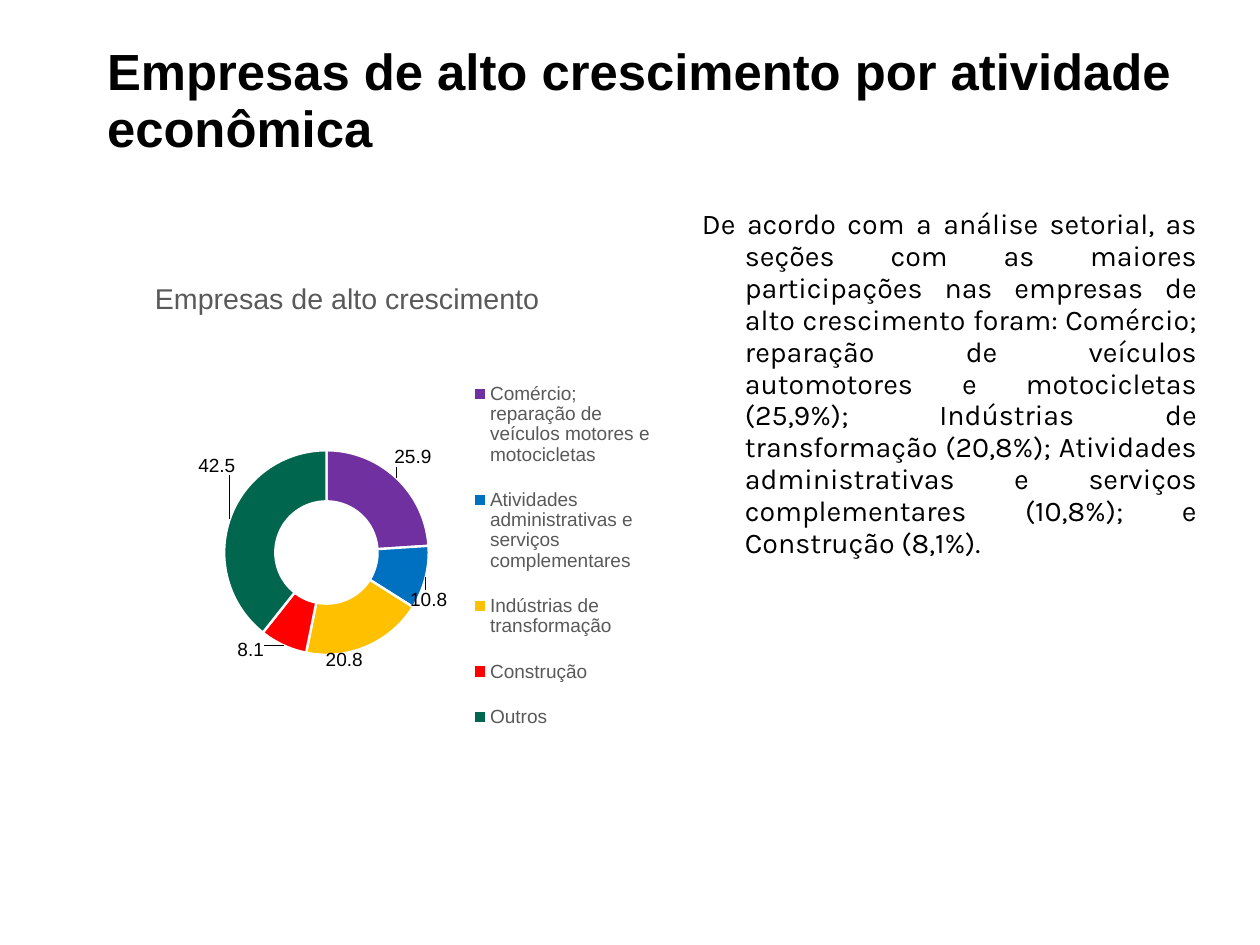
from pptx import Presentation
from pptx import util as u
from pptx.chart import data
from pptx.dml import color
from pptx.enum import chart as ch, text
from pptx.oxml import parse_xml
from pptx.oxml.ns import nsdecls

EMU_PER_PX = 8000
TITLE = "Empresas de alto crescimento por atividade econômica"
BODY = (
    "De acordo com a análise setorial, as seções com as maiores participações "
    "nas empresas de alto crescimento foram: Comércio; reparação de veículos "
    "automotores e motocicletas (25,9%); Indústrias de transformação (20,8%); "
    "Atividades administrativas e serviços complementares (10,8%); "
    "e Construção (8,1%)."
)
# Category, value, colour, label shift as a fraction of the chart
SECTORS = [
    ("Comércio; reparação de veículos motores e motocicletas",
     25.9, "7030A0", (0.055, -0.07)),
    ("Atividades administrativas e serviços complementares",
     10.8, "0070C0", (0.045, 0.05)),
    ("Indústrias de transformação", 20.8, "FFC000", (-0.02, 0.065)),
    ("Construção", 8.1, "FF0000", (-0.07, 0.05)),
    ("Outros", 42.5, "00664D", (-0.06, -0.11)),
]


def px(n):
    return u.Emu(n * EMU_PER_PX)


def rgb(value):
    return color.RGBColor.from_string(value)


def set_attrs(obj, **values):
    for name, value in values.items():
        setattr(obj, name, value)


def set_font(font, size, name="Arial", hex_color="000000", bold=False):
    set_attrs(font, size=u.Pt(size), name=name, bold=bold)
    font.color.rgb = rgb(hex_color)


def box(left, top, width, height):
    return dict(left=px(left), top=px(top), width=px(width), height=px(height))


def fill_text(sp, content, size, font, bold=False, align=text.PP_ALIGN.LEFT):
    tf = sp.text_frame
    set_attrs(tf, text=content, word_wrap=True,
              auto_size=text.MSO_AUTO_SIZE.NONE,
              vertical_anchor=text.MSO_ANCHOR.TOP,
              margin_left=0, margin_right=0, margin_top=0, margin_bottom=0)
    p = tf.paragraphs[0]
    set_attrs(p, alignment=align, line_spacing=0.93)
    set_font(p.runs[0].font, size, font, bold=bold)
    return p


def add_body(slide):
    sp = slide.shapes.add_textbox(**box(702, 207, 495, 562))
    p = fill_text(sp, BODY, 18, "Karla", align=text.PP_ALIGN.JUSTIFY)
    sp.text_frame.margin_top = px(2)
    pPr = p._p.get_or_add_pPr()
    pPr.set("marL", str(px(43)))
    pPr.set("indent", str(px(-43)))


def set_layout(parent, index, inner=False, edge=True, **fractions):
    """Give a chart part a manual layout, as its child number index."""
    for old in parent.xpath("c:layout"):
        parent.remove(old)
    parts = ['<c:layoutTarget val="inner"/>'] if inner else []
    if edge:
        parts += ['<c:xMode val="edge"/>', '<c:yMode val="edge"/>']
    parts += [f'<c:{k} val="{v}"/>' for k, v in fractions.items()]
    parent.insert(index, parse_xml(
        f'<c:layout {nsdecls("c")}><c:manualLayout>{"".join(parts)}'
        '</c:manualLayout></c:layout>'))


def add_doughnut(slide):
    cd = data.CategoryChartData(number_format="0.0")
    cd.categories = [s[0] for s in SECTORS]
    cd.add_series("Series 1", [s[1] for s in SECTORS])
    frame = slide.shapes.add_chart(
        ch.XL_CHART_TYPE.DOUGHNUT, *box(63, 207, 620, 562).values(), cd)
    chart = frame.chart
    set_font(chart.font, 10)

    chart.has_title = True
    tf = chart.chart_title.text_frame
    tf.text = "Empresas de alto crescimento"
    set_font(tf.paragraphs[0].runs[0].font, 18, hex_color="595959")

    chart.has_legend = True
    set_attrs(chart.legend, position=ch.XL_LEGEND_POSITION.BOTTOM,
              include_in_layout=False)
    set_font(chart.legend.font, 12, hex_color="595959")

    plot = chart.plots[0]
    plot.vary_by_categories = True
    series = plot.series[0]
    labels = series.data_labels
    set_attrs(labels, show_value=True, show_percentage=False,
              number_format="0.0", number_format_is_linked=False)
    set_font(labels.font, 12)
    for i, (_, _, fill, _) in enumerate(SECTORS):
        point = series.points[i]
        point.format.fill.solid()
        point.format.fill.fore_color.rgb = rgb(fill)
        point.format.line.color.rgb = rgb("FFFFFF")
        point.format.line.width = u.Pt(1.5)
        set_font(point.data_label.font, 12)

    root = chart.element
    for label, (_, _, _, (dx, dy)) in zip(root.xpath(".//c:dLbl"), SECTORS):
        set_layout(label, 1, edge=False, x=dx, y=dy)
    root.xpath(".//c:holeSize")[0].set("val", "75")
    set_layout(root.xpath(".//c:plotArea")[0], 0, inner=True,
               x=0.26, y=0.37, w=0.33, h=0.49)
    set_layout(root.xpath(".//c:title")[0], 1, x=0.14, y=0.12)
    set_layout(root.xpath(".//c:legend")[0], 1, x=0.65, y=0.27, w=0.31, h=0.7)


def main():
    prs = Presentation()
    set_attrs(prs, slide_width=px(1260), slide_height=px(945))
    slide = prs.slides.add_slide(prs.slide_layouts[5])
    title = slide.shapes.title
    set_attrs(title, **box(107, 45, 1089, 150))
    fill_text(title, TITLE, 32, "Arial", bold=True)
    add_body(slide)
    add_doughnut(slide)
    prs.save("out.pptx")


if __name__ == "__main__":
    main()
